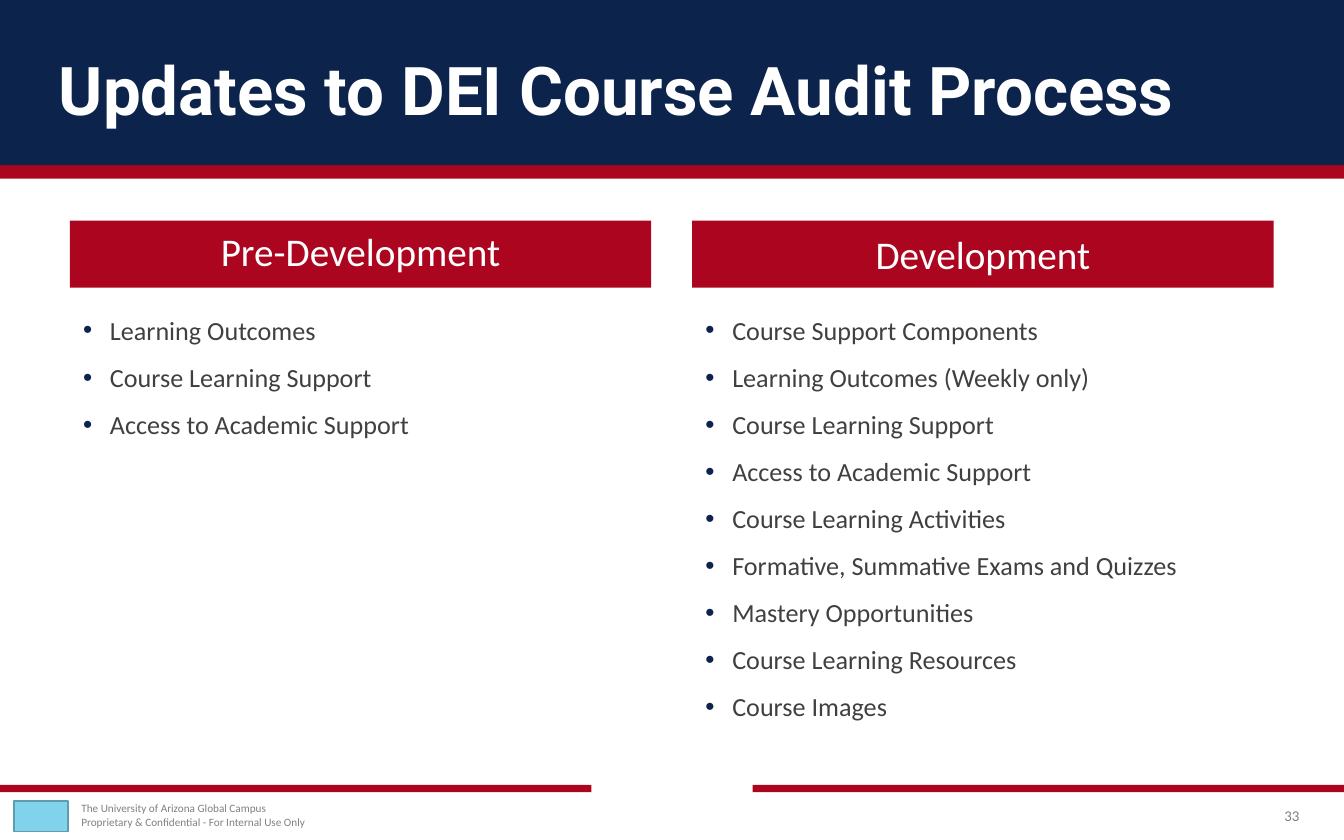
"""Build the slide on updates to the DEI course audit process."""
from lxml.etree import SubElement
from pptx import Presentation
from pptx.dml.color import RGBColor
from pptx.enum.shapes import MSO_SHAPE
from pptx.enum.text import MSO_ANCHOR, PP_ALIGN
from pptx.oxml.ns import qn
from pptx.util import Pt

COLORS = {
    "navy": "0C234B",
    "red": "AB0520",
    "white": "FFFFFF",
    "body": "404040",
    "footer": "808080",
    "emblem": "81D3EB",
    "emblem_line": "5F9CAE",
}

deck = Presentation()
deck.slide_width, deck.slide_height = Pt(720), Pt(450)
page = deck.slides.add_slide(deck.slide_layouts[6])


def add_block(left, top, width, height, fill):
    block = page.shapes.add_shape(MSO_SHAPE.RECTANGLE, Pt(left), Pt(top), Pt(width), Pt(height))
    block.shadow.inherit = False
    block.fill.solid()
    block.fill.fore_color.rgb = RGBColor.from_string(COLORS[fill])
    block.line.fill.background()
    return block


def write(box, text, size, color, font="Calibri", bold=False, align=PP_ALIGN.LEFT,
          anchor=MSO_ANCHOR.TOP, insets=(7.2, 3.6, 7.2, 3.6), spacing=1.0, after=0, bullet=None):
    frame = box.text_frame
    frame.word_wrap = True
    frame.vertical_anchor = anchor
    frame.margin_left, frame.margin_top, frame.margin_right, frame.margin_bottom = map(Pt, insets)
    frame.text = text
    for para in frame.paragraphs:
        para.alignment = align
        para.line_spacing = spacing
        para.space_after = Pt(after)
        if bullet:
            properties = para._p.get_or_add_pPr()
            properties.set("marL", str(Pt(14.4)))
            properties.set("indent", str(-Pt(14.4)))
            bullet_color = SubElement(properties, qn("a:buClr"))
            SubElement(bullet_color, qn("a:srgbClr"), val=COLORS[bullet])
            SubElement(properties, qn("a:buFont"), typeface="Arial")
            SubElement(properties, qn("a:buChar"), char="•")
        for span in para.runs:
            span.font.name = font
            span.font.size = Pt(size)
            span.font.bold = bold
            span.font.color.rgb = RGBColor.from_string(COLORS[color])


add_block(0, 0, 720, 95.76, "red")
add_block(0, 0, 720, 88.56, "navy")
for left in (0, 403.2):
    add_block(left, 420.4, 316.8, 4, "red")

title = page.shapes.add_textbox(Pt(24.5), Pt(25.9), Pt(672.5), Pt(49))
write(title, "Updates to DEI Course Audit Process", 36, "white", font="Roboto", bold=True,
      anchor=MSO_ANCHOR.MIDDLE, insets=(7.2, 7.2, 7.2, 7.2), spacing=0.9, after=12)

columns = [
    (37.4, "Pre-Development", MSO_ANCHOR.TOP, [
        "Learning Outcomes",
        "Course Learning Support",
        "Access to Academic Support",
    ]),
    (370.8, "Development", MSO_ANCHOR.MIDDLE, [
        "Course Support Components",
        "Learning Outcomes (Weekly only)",
        "Course Learning Support",
        "Access to Academic Support",
        "Course Learning Activities",
        "Formative, Summative Exams and Quizzes",
        "Mastery Opportunities",
        "Course Learning Resources",
        "Course Images",
    ]),
]
for left, heading, anchor, items in columns:
    header = add_block(left, 118.2, 311.5, 36, "red")
    write(header, heading, 21, "white", align=PP_ALIGN.CENTER, anchor=anchor)
    listing = page.shapes.add_textbox(Pt(left), Pt(154.2), Pt(311.5), Pt(206.6))
    write(listing, "\n".join(items), 14, "body", insets=(7.2, 5.76, 11.52, 5.76),
          spacing=1.5, bullet="navy")

emblem = add_block(7.5, 428.9, 29, 16.6, "emblem")
emblem.line.color.rgb = RGBColor.from_string(COLORS["emblem_line"])
emblem.line.width = Pt(1)

notice = page.shapes.add_textbox(Pt(36.5), Pt(427.7), Pt(148.3), Pt(18))
write(notice, "The University of Arizona Global Campus\nProprietary & Confidential - For Internal Use Only",
      6, "footer", anchor=MSO_ANCHOR.MIDDLE, insets=(7.2, 0, 0, 0))
number = page.shapes.add_textbox(Pt(659.5), Pt(427.7), Pt(36.7), Pt(18))
write(number, "33", 8, "footer", align=PP_ALIGN.RIGHT, anchor=MSO_ANCHOR.MIDDLE, insets=(0, 0, 0, 0))

deck.save("out.pptx")
